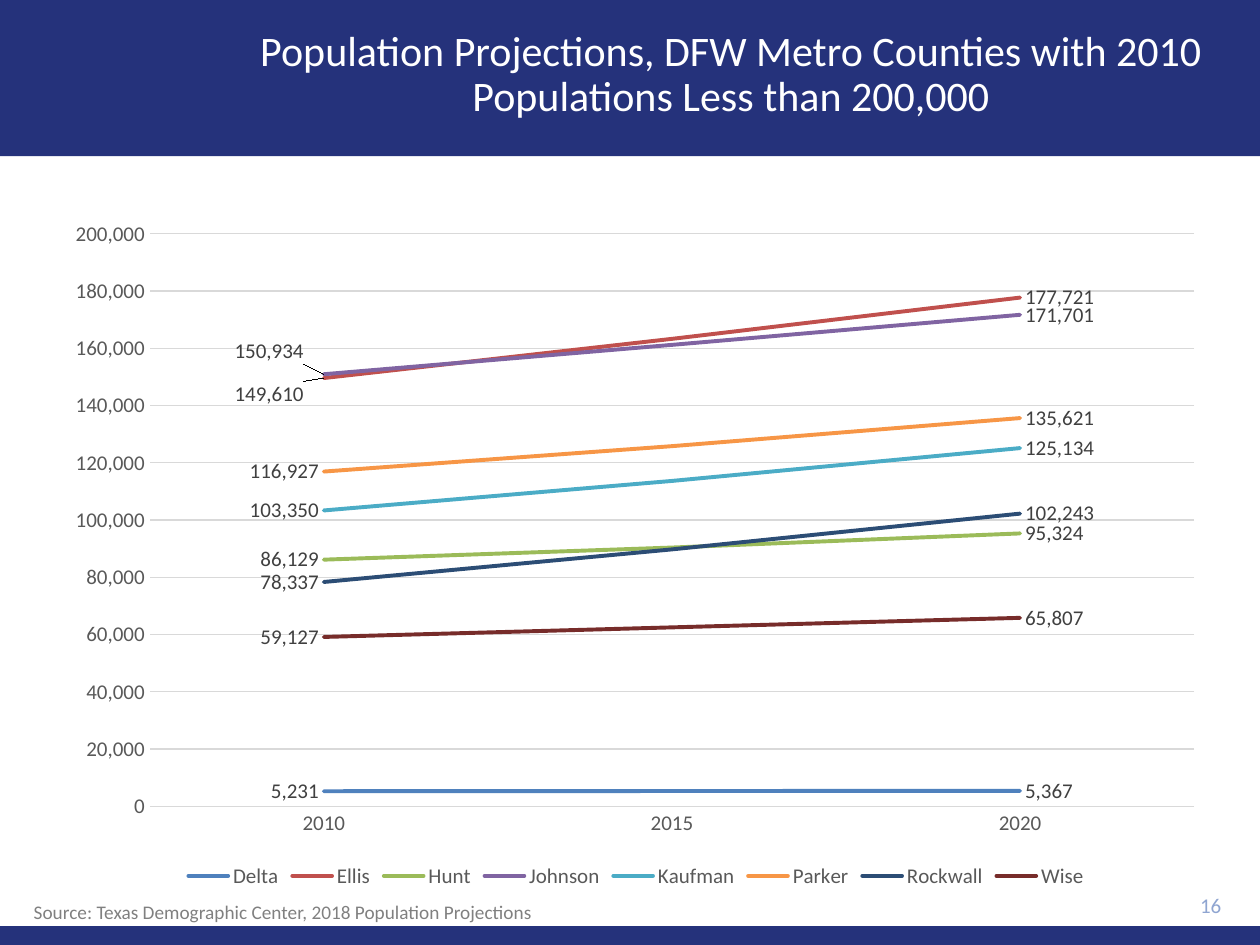
from dataclasses import dataclass

from pptx import Presentation
from pptx.chart.data import CategoryChartData
from pptx.dml.color import RGBColor
from pptx.enum.chart import XL_CHART_TYPE, XL_LABEL_POSITION, XL_LEGEND_POSITION, XL_TICK_MARK
from pptx.enum.shapes import MSO_SHAPE
from pptx.enum.text import MSO_ANCHOR, PP_ALIGN
from pptx.oxml import parse_xml
from pptx.oxml.ns import nsdecls, qn
from pptx.util import Cm, Pt


@dataclass(frozen=True)
class Theme:
    """Colours, font and type sizes of the slide."""
    font: str = "Calibri"
    band: str = "25327B"
    title: str = "FFFFFF"
    number: str = "8FA5D1"
    source: str = "808080"
    axis: str = "595959"
    label: str = "404040"
    grid: str = "D9D9D9"
    title_size: float = 24
    body_size: float = 12
    source_size: float = 11
    grid_width: float = 0.75
    series_width: float = 2.25


@dataclass(frozen=True)
class Box:
    """A region of the slide in centimetres."""
    left: float
    top: float
    width: float
    height: float

    def inner(self, left, top, width, height):
        """Return a box placed relative to this one."""
        return Box(self.left + left, self.top + top, width, height)

    def lengths(self):
        """Return the four lengths for python-pptx."""
        return Cm(self.left), Cm(self.top), Cm(self.width), Cm(self.height)


THEME = Theme()
YEARS = ("2010", "2015", "2020")
COUNTIES = (
    ("Delta", "4F81BD", (5231, 5299, 5367)),
    ("Ellis", "C0504D", (149610, 163301, 177721)),
    ("Hunt", "9BBB59", (86129, 90372, 95324)),
    ("Johnson", "8064A2", (150934, 161209, 171701)),
    ("Kaufman", "4BACC6", (103350, 113657, 125134)),
    ("Parker", "F79646", (116927, 125811, 135621)),
    ("Rockwall", "2C4D75", (78337, 89731, 102243)),
    ("Wise", "772C2A", (59127, 62467, 65807)),
)
LABEL_SHIFTS = {"Ellis": {"x": -0.013, "y": 0.023}, "Johnson": {"x": -0.013, "y": -0.033}}


def style_font(font, size, color):
    """Set the typeface, size and colour of a font."""
    font.name = THEME.font
    font.size = Pt(size)
    font.color.rgb = RGBColor.from_string(color)


def style_line(line, width, color):
    """Set the width and colour of a line."""
    line.width = Pt(width)
    line.color.rgb = RGBColor.from_string(color)


def add_band(slide, box):
    """Add a plain band in the theme colour."""
    band = slide.shapes.add_shape(MSO_SHAPE.RECTANGLE, *box.lengths())
    band.shadow.inherit = False
    band.fill.solid()
    band.fill.fore_color.rgb = RGBColor.from_string(THEME.band)
    band.line.fill.background()


def add_text(slide, box, text, size, color, align=PP_ALIGN.LEFT, anchor=MSO_ANCHOR.MIDDLE, wrap=True):
    """Add a one-paragraph text box and return its paragraph."""
    frame = slide.shapes.add_textbox(*box.lengths()).text_frame
    frame.word_wrap = wrap
    frame.vertical_anchor = anchor
    paragraph = frame.paragraphs[0]
    paragraph.alignment = align
    run = paragraph.add_run()
    run.text = text
    style_font(run.font, size, color)
    return paragraph


def add_layout(parent, position, **values):
    """Give a chart element a manual layout."""
    for existing in parent.findall(qn("c:layout")):
        parent.remove(existing)
    parts = "".join(f'<c:{name} val="{value}"/>' for name, value in values.items())
    parent.insert(position, parse_xml(
        f'<c:layout {nsdecls("c")}><c:manualLayout>{parts}</c:manualLayout></c:layout>'))


def label_series(series):
    """Label the first point on the left and the last on the right."""
    labels = series.data_labels
    labels.show_value = True
    labels.position = XL_LABEL_POSITION.RIGHT
    style_font(labels.font, THEME.body_size, THEME.label)
    first = series.points[0].data_label
    first.position = XL_LABEL_POSITION.LEFT
    style_font(first.font, THEME.body_size, THEME.label)
    first_element = series._element.find(f'{qn("c:dLbls")}/{qn("c:dLbl")}')
    first_element.addnext(parse_xml(
        f'<c:dLbl {nsdecls("c")}><c:idx val="1"/><c:delete val="1"/></c:dLbl>'))
    if series.name in LABEL_SHIFTS:
        add_layout(first_element, 1, **LABEL_SHIFTS[series.name])


def style_axes(chart):
    """Style both axes and the gridlines."""
    for axis in (chart.category_axis, chart.value_axis):
        axis.major_tick_mark = axis.minor_tick_mark = XL_TICK_MARK.NONE
        style_font(axis.tick_labels.font, THEME.body_size, THEME.axis)
    style_line(chart.category_axis.format.line, THEME.grid_width, THEME.grid)
    values = chart.value_axis
    values.minimum_scale, values.maximum_scale, values.major_unit = 0, 200000, 20000
    values.format.line.fill.background()
    style_line(values.major_gridlines.format.line, THEME.grid_width, THEME.grid)
    values.tick_labels.number_format = "#,##0"
    values.tick_labels.number_format_is_linked = False


def add_header(slide, box):
    """Add the title band."""
    add_band(slide, box)
    title = add_text(
        slide, box.inner(4.32, 0.25, 20.83, 2.54),
        "Population Projections, DFW Metro Counties with 2010 Populations Less than 200,000",
        THEME.title_size, THEME.title, PP_ALIGN.CENTER)
    title.line_spacing = 0.9


def add_projection_chart(slide, box):
    """Add the line chart of county populations."""
    data = CategoryChartData(number_format="#,##0")
    data.categories = YEARS
    for name, _, populations in COUNTIES:
        data.add_series(name, populations)
    chart = slide.shapes.add_chart(XL_CHART_TYPE.LINE, *box.lengths(), data).chart
    style_font(chart.font, THEME.body_size, "000000")
    chart.has_title = False
    chart.has_legend = True
    chart.legend.position = XL_LEGEND_POSITION.BOTTOM
    chart.legend.include_in_layout = False
    style_font(chart.legend.font, THEME.body_size, THEME.axis)
    style_axes(chart)
    plot = chart.plots[0]
    plot.vary_by_categories = False
    for series, (_, color, _) in zip(plot.series, COUNTIES):
        series.smooth = False
        style_line(series.format.line, THEME.series_width, color)
        series._element.find(f'{qn("c:spPr")}/{qn("a:ln")}').set("cap", "rnd")
        label_series(series)
    plot_area = chart._chartSpace.find(f'{qn("c:chart")}/{qn("c:plotArea")}')
    add_layout(plot_area, 0, layoutTarget="inner", xMode="edge", yMode="edge",
               x=0.083, y=0.038, w=0.896, h=0.835)


def add_footer(slide, box):
    """Add the bottom band, page number and source note."""
    add_band(slide, box.inner(0, 0.86, box.width, 0.38))
    add_text(slide, box.inner(22.61, 0, 2.26, 0.86), "16",
             THEME.body_size, THEME.number, PP_ALIGN.RIGHT)
    add_text(slide, box.inner(0.43, 0.22, 11.13, 0.74),
             "Source: Texas Demographic Center, 2018 Population Projections",
             THEME.source_size, THEME.source, anchor=MSO_ANCHOR.TOP, wrap=False)


def main():
    """Build and save the presentation."""
    presentation = Presentation()
    presentation.slide_width, presentation.slide_height = Cm(25.4), Cm(19.05)
    slide = presentation.slides.add_slide(presentation.slide_layouts[6])
    add_header(slide, Box(0, 0, 25.4, 3.15))
    add_footer(slide, Box(0, 17.81, 25.4, 1.24))
    add_projection_chart(slide, Box(1.07, 4.19, 23.5, 13.82))
    presentation.save("out.pptx")


if __name__ == "__main__":
    main()
